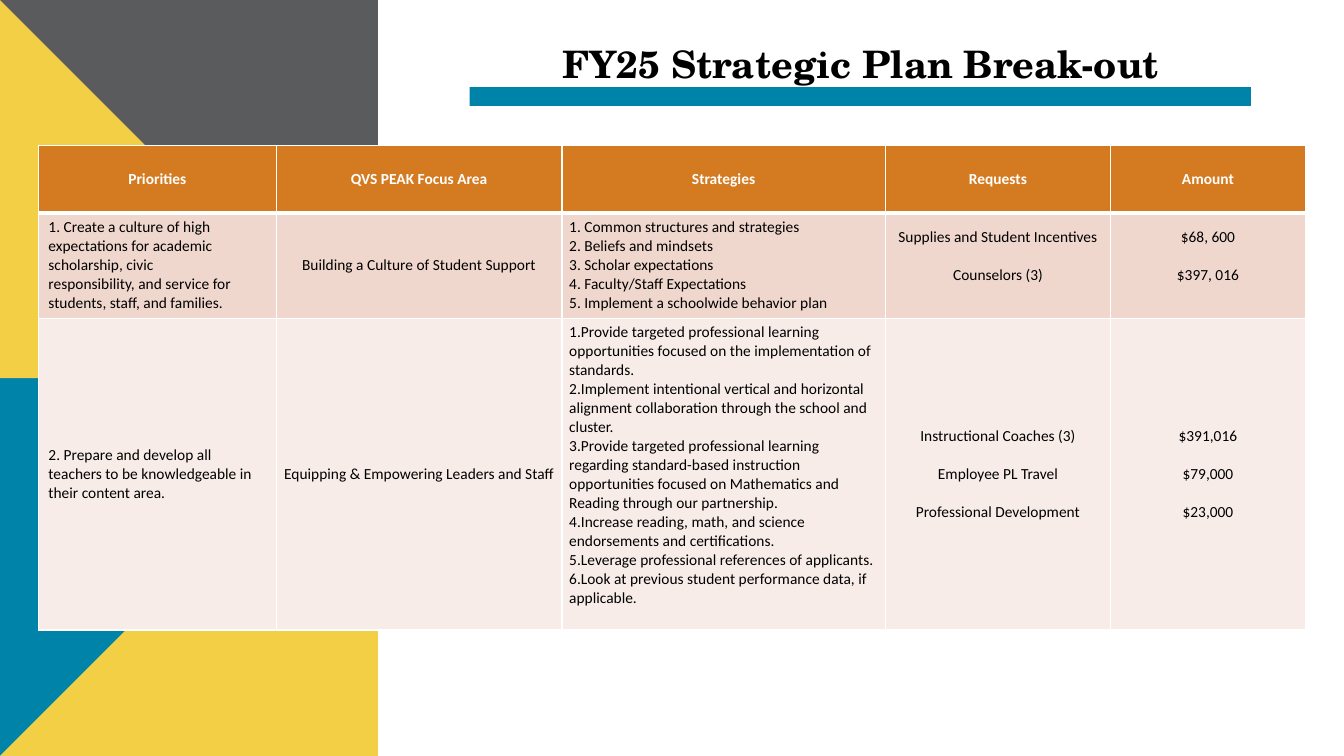
"""Build the strategic plan break-out slide."""
import pptx
import pptx.dml.color
import pptx.enum.shapes
import pptx.enum.text
import pptx.oxml
import pptx.oxml.ns
import pptx.util

Pt = pptx.util.Pt
LEFT = pptx.enum.text.PP_ALIGN.LEFT
MID = pptx.enum.text.PP_ALIGN.CENTER
HUES = {"blue": "0083A9", "gold": "F3CF45", "gray": "595B5D", "head": "D47B22",
        "dark": "EFD7CD", "pale": "F7ECE8", "white": "FFFFFF", "black": "000000"}
TITLE = {"name": "TeX Gyre Schola", "size": Pt(27), "bold": True}
HEAD = {"name": "Calibri", "size": Pt(11), "bold": True}
BODY = {**HEAD, "bold": False}
LINE = 13.5
WIDE = (170, 204, 231, 161, 139)
TALL = (48, 75.5, 222.5)
ROWS = [
    [["Priorities"], ["QVS PEAK Focus Area"], ["Strategies"], ["Requests"], ["Amount"]],
    [["1. Create a culture of high expectations for academic scholarship, civic",
      "responsibility, and service for students, staff, and families."],
     ["Building a Culture of Student Support"],
     ["1. Common structures and strategies", "2. Beliefs and mindsets",
      "3. Scholar expectations", "4. Faculty/Staff Expectations",
      "5. Implement a schoolwide behavior plan"],
     ["Supplies and Student Incentives", "Counselors (3)"],
     ["$68, 600", "$397, 016"]],
    [["2. Prepare and develop all teachers to be knowledgeable in their content area."],
     ["Equipping & Empowering Leaders and Staff"],
     ["1.Provide targeted professional learning opportunities focused on the "
      "implementation of standards.",
      "2.Implement intentional vertical and horizontal alignment collaboration "
      "through the school and cluster.",
      "3.Provide targeted professional learning regarding standard-based instruction "
      "opportunities focused on Mathematics and Reading through our partnership.",
      "4.Increase reading, math, and science endorsements and certifications.",
      "5.Leverage professional references of applicants.",
      "6.Look at previous student performance data, if applicable."],
     ["Instructional Coaches (3)", "Employee PL Travel", "Professional Development"],
     ["$391,016", "$79,000", "$23,000"]],
]
RAISED = {(1, 3), (1, 4), (2, 2)}


def paint(fill, hue):
    """Give a fill one solid colour."""
    fill.solid()
    fill.fore_color.rgb = pptx.dml.color.RGBColor.from_string(HUES[hue])


def write(frame, texts, form, hue, align, gap=0):
    """Write one paragraph per text, with a gap between them."""
    for i, text in enumerate(texts):
        para = frame.paragraphs[0] if i == 0 else frame.add_paragraph()
        para.alignment = align
        para.space_before = Pt(gap if i else 0)
        run = para.add_run()
        run.text = text
        for key, value in form.items():
            setattr(run.font, key, value)
        paint(run.font.fill, hue)


def shape(slide, points, hue):
    """Draw a filled outline through the points."""
    pen = slide.shapes.build_freeform(*points[0], scale=Pt(1))
    pen.add_line_segments(points[1:], close=True)
    form = pen.convert_to_shape()
    form.shadow.inherit = False
    form.line.fill.background()
    paint(form.fill, hue)


def panel(slide, x, y, w, h, back, front, rise):
    """Draw a block split by a diagonal into two colours."""
    right, low = x + w, y + h
    shape(slide, [(x, y), (right, y), (right, low), (x, low)], back)
    start = (right, y) if rise else (x, y)
    shape(slide, [start, (right, low), (x, low)], front)


def banner(slide, x, y, w, h):
    """Set the title above its bar."""
    bar = slide.shapes.add_shape(pptx.enum.shapes.MSO_SHAPE.RECTANGLE,
                                 Pt(x + 66), Pt(y + 37), Pt(558), Pt(13.5))
    bar.shadow.inherit = False
    bar.line.fill.background()
    paint(bar.fill, "blue")
    frame = slide.shapes.add_textbox(Pt(x), Pt(y), Pt(w), Pt(h)).text_frame
    frame.word_wrap = True
    write(frame, ["FY25 Strategic Plan Break-out"], TITLE, "black", MID)


def edge(cell, heavy):
    """Rule the sides of a cell in white."""
    props = cell._tc.get_or_add_tcPr()
    for side in "LRTB":
        width = Pt(3) if side == heavy else Pt(1)
        props.append(pptx.oxml.parse_xml(
            f'<a:ln{side} {pptx.oxml.ns.nsdecls("a")} w="{width}"><a:solidFill>'
            f'<a:srgbClr val="{HUES["white"]}"/></a:solidFill></a:ln{side}>'))


def grid(slide, x, y):
    """Place the table of priorities and requests."""
    table = slide.shapes.add_table(len(TALL), len(WIDE), Pt(x), Pt(y),
                                   Pt(sum(WIDE)), Pt(sum(TALL))).table
    for col, width in zip(table.columns, WIDE):
        col.width = Pt(width)
    for r, (row, tall) in enumerate(zip(ROWS, TALL)):
        table.rows[r].height = Pt(tall)
        for c, texts in enumerate(row):
            cell = table.cell(r, c)
            roomy = r and c == 0
            side, rim = (7.2, 3.6) if roomy else (5.2, 2.6)
            lift = LINE if (r, c) in RAISED else 0
            form = {"margin_left": Pt(side), "margin_right": Pt(side),
                    "margin_top": Pt(rim), "margin_bottom": Pt(rim + lift),
                    "vertical_anchor": pptx.enum.text.MSO_ANCHOR.MIDDLE}
            for key, value in form.items():
                setattr(cell, key, value)
            edge(cell, {0: "B", 1: "T"}.get(r))
            paint(cell.fill, ("head", "dark", "pale")[r])
            write(cell.text_frame, texts, BODY if r else HEAD,
                  "black" if r else "white",
                  LEFT if r and c in (0, 2) else MID, LINE if c > 2 else 0)


def main():
    """Build and save the slide."""
    deck = pptx.Presentation()
    deck.slide_width, deck.slide_height = Pt(960), Pt(540)
    slide = deck.slides.add_slide(deck.slide_layouts[6])
    panel(slide, 0, 270, 270, 270, "blue", "gold", True)
    panel(slide, 0, 0, 269.5, 270.5, "gray", "gold", False)
    banner(slide, 269.5, 25.2, 690.5, 40.5)
    grid(slide, 27.4, 104)
    deck.save("out.pptx")


if __name__ == "__main__":
    main()
